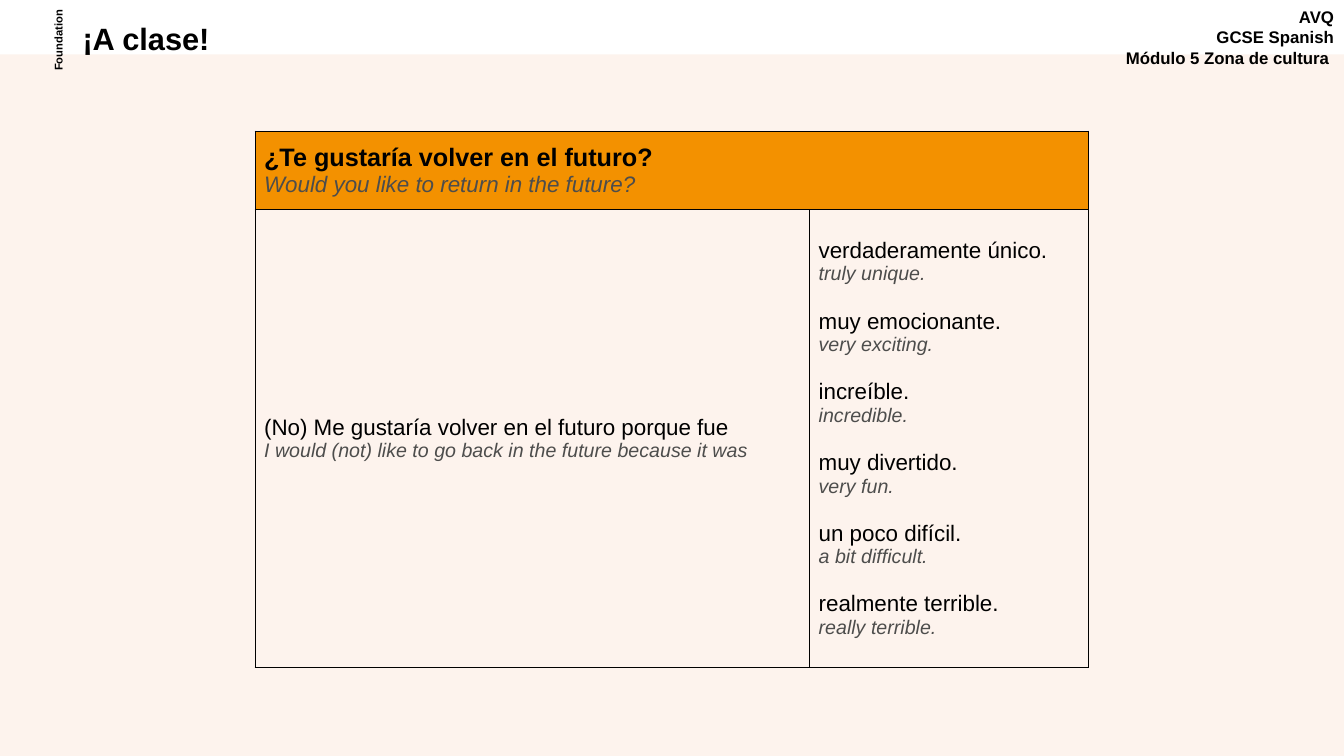
"""Builds the Spanish sentence-builder slide about returning in the future."""
import pptx
import pptx.util
import pptx.dml.color
import pptx.enum.shapes
import pptx.enum.text
import pptx.oxml
import pptx.oxml.ns

PX = 9144
COLORS = {"black": "000000", "grey": "4D4D4C", "cream": "FDF3ED", "orange": "F39100"}
ALIGN = pptx.enum.text.PP_ALIGN


def add_text(tf, text, size, color="black", bold=False, italic=False, align=ALIGN.LEFT,
             before=0, spacing=1.0):
    p = tf.paragraphs[0]
    if p.runs:
        p = tf.add_paragraph()
    p.alignment = align
    p.space_before = pptx.util.Pt(before)
    p.line_spacing = spacing
    r = p.add_run()
    r.text = text
    r.font.name = "Arial"
    r.font.size = pptx.util.Pt(size)
    r.font.bold = bold
    r.font.italic = italic
    r.font.color.rgb = pptx.dml.color.RGBColor.from_string(COLORS[color])


def add_box(left, top, width, height):
    sp = s.shapes.add_textbox(left * PX, top * PX, width * PX, height * PX)
    sp.text_frame.word_wrap = True
    return sp


prs = pptx.Presentation()
prs.slide_width = 1333 * PX
prs.slide_height = 750 * PX
s = prs.slides.add_slide(prs.slide_layouts[6])

backdrop = s.shapes.add_shape(pptx.enum.shapes.MSO_SHAPE.RECTANGLE,
                              0, 54 * PX, 1333 * PX, 696 * PX)
backdrop.shadow.inherit = False
backdrop.fill.solid()
backdrop.fill.fore_color.rgb = pptx.dml.color.RGBColor.from_string(COLORS["cream"])
backdrop.line.fill.background()

course = add_box(1099, 2, 234, 77)
for line in ("AVQ", "GCSE Spanish", "Módulo 5 Zona de cultura "):
    add_text(course.text_frame, line, 12, bold=True, align=ALIGN.RIGHT)

title = add_box(72, 19, 688, 43)
add_text(title.text_frame, "¡A clase!", 22, bold=True, spacing=0.9)

tier = add_box(6, 29, 102, 22)
tier.rotation = 270
add_text(tier.text_frame, "Foundation", 8, bold=True, align=ALIGN.CENTER)

table = s.shapes.add_table(2, 2, 253 * PX, 130 * PX, 827 * PX, 532 * PX).table
for column, width in zip(table.columns, (550, 277)):
    column.width = width * PX
for row, height in zip(table.rows, (78, 454)):
    row.height = height * PX
table.cell(0, 0).merge(table.cell(0, 1))

for cell in table.iter_cells():
    cell.vertical_anchor = pptx.enum.text.MSO_ANCHOR.MIDDLE
    cell.margin_left = cell.margin_right = 9 * PX
    cell.margin_top = cell.margin_bottom = 4 * PX
    tcPr = cell._tc.get_or_add_tcPr()
    for side in ("lnL", "lnR", "lnT", "lnB"):
        tcPr.append(pptx.oxml.parse_xml(
            f'<a:{side} {pptx.oxml.ns.nsdecls("a")} w="9525"><a:solidFill>'
            f'<a:srgbClr val="{COLORS["black"]}"/></a:solidFill></a:{side}>'))
    cell.fill.background()

question = table.cell(0, 0)
question.fill.solid()
question.fill.fore_color.rgb = pptx.dml.color.RGBColor.from_string(COLORS["orange"])
add_text(question.text_frame, "¿Te gustaría volver en el futuro?", 18, bold=True)
add_text(question.text_frame, "Would you like to return in the future?", 16, "grey", italic=True)

OPENING = [("(No) Me gustaría volver en el futuro porque fue",
            "I would (not) like to go back in the future because it was")]
OPINIONS = [
    ("verdaderamente único.", "truly unique."),
    ("muy emocionante.", "very exciting."),
    ("increíble.", "incredible."),
    ("muy divertido.", "very fun."),
    ("un poco difícil.", "a bit difficult."),
    ("realmente terrible.", "really terrible."),
]
for column, phrases in enumerate((OPENING, OPINIONS)):
    tf = table.cell(1, column).text_frame
    for i, (spanish, english) in enumerate(phrases):
        add_text(tf, spanish, 16, before=17 if i else 0)
        add_text(tf, english, 14, "grey", italic=True)

prs.save("out.pptx")
